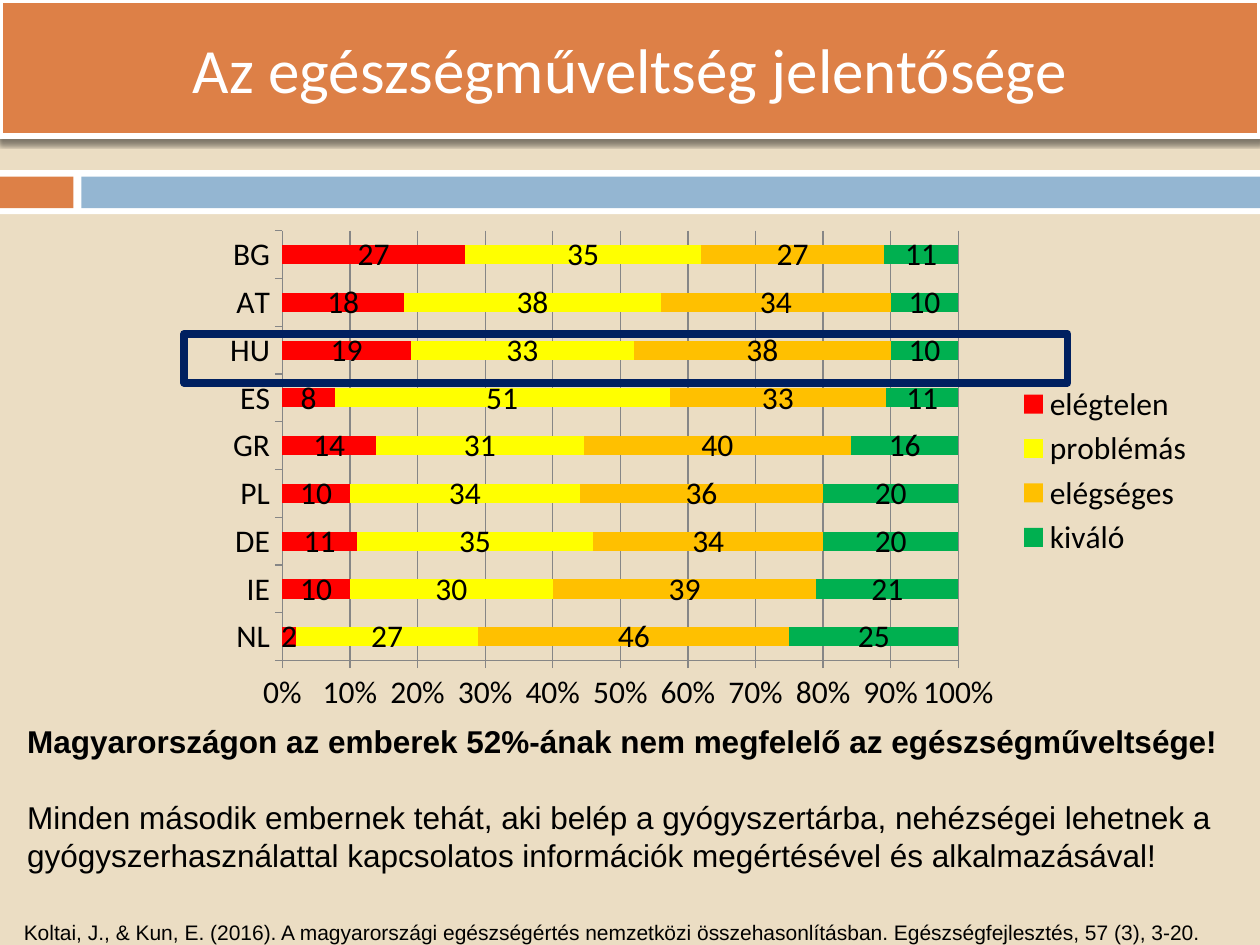
from lxml.etree import SubElement
from pptx import Presentation
from pptx.chart.data import CategoryChartData
from pptx.dml.color import RGBColor
from pptx.enum.chart import XL_CHART_TYPE, XL_LABEL_POSITION, XL_LEGEND_POSITION, XL_TICK_MARK
from pptx.enum.shapes import MSO_SHAPE
from pptx.enum.text import MSO_ANCHOR, PP_ALIGN
from pptx.oxml import parse_xml
from pptx.oxml.ns import nsdecls, qn
from pptx.util import Cm, Pt

SAND = RGBColor(0xEB, 0xDD, 0xC3)
WHITE = RGBColor(0xFF, 0xFF, 0xFF)
BLACK = RGBColor(0, 0, 0)
ORANGE = RGBColor(0xDD, 0x80, 0x47)
BLUE = RGBColor(0x94, 0xB6, 0xD2)
NAVY = RGBColor(0x00, 0x20, 0x60)
GREY = RGBColor(0x86, 0x86, 0x86)
RED = RGBColor(0xFF, 0, 0)
YELLOW = RGBColor(0xFF, 0xFF, 0)
AMBER = RGBColor(0xFF, 0xC0, 0)
GREEN = RGBColor(0, 0xB0, 0x50)

LANDS = ["NL", "IE", "DE", "PL", "GR", "ES", "HU", "AT", "BG"]
LEVELS = [
    ("elégtelen", RED, [2, 10, 11, 10, 14, 8, 19, 18, 27]),
    ("problémás", YELLOW, [27, 30, 35, 34, 31, 51, 33, 38, 35]),
    ("elégséges", AMBER, [46, 39, 34, 36, 40, 33, 38, 34, 27]),
    ("kiváló", GREEN, [25, 21, 20, 20, 16, 11, 10, 10, 11]),
]
SHADOW = (
    f'<a:effectLst {nsdecls("a")}><a:outerShdw blurRad="38100" dist="30480" dir="5400000" '
    'rotWithShape="0"><a:srgbClr val="000000"><a:alpha val="45000"/></a:srgbClr>'
    "</a:outerShdw></a:effectLst>"
)


class Deck:
    head = "Calibri"
    body = "Arial"

    def __init__(self):
        self.prs = Presentation()
        self.prs.slide_width, self.prs.slide_height = Cm(25.4), Cm(19.05)
        self.slide = self.prs.slides.add_slide(self.prs.slide_layouts[5])
        fill = self.slide.background.fill
        fill.solid()
        fill.fore_color.rgb = SAND

    def paint(self, shape, fill=None, line=None, width=0):
        if fill is None:
            shape.fill.background()
        else:
            shape.fill.solid()
            shape.fill.fore_color.rgb = fill
        if line is None:
            shape.line.fill.background()
        else:
            shape.line.color.rgb = line
            shape.line.width = Pt(width)

    def style(self, font, size, color=BLACK, name=None, bold=False):
        font.name = name or self.body
        font.size = Pt(size)
        font.bold = bold
        font.color.rgb = color

    def title(self, text, box):
        shape = self.slide.shapes.title
        shape.left, shape.top, shape.width, shape.height = map(Cm, box)
        self.paint(shape, ORANGE, WHITE, 3.75)
        shape.element.spPr.append(parse_xml(SHADOW))
        frame = shape.text_frame
        frame.vertical_anchor = MSO_ANCHOR.MIDDLE
        para = frame.paragraphs[0]
        para.alignment = PP_ALIGN.CENTER
        run = para.add_run()
        run.text = text
        self.style(run.font, 36, WHITE, self.head)

    def rect(self, box, fill=None, line=None, width=0):
        shape = self.slide.shapes.add_shape(MSO_SHAPE.RECTANGLE, *map(Cm, box))
        shape.shadow.inherit = False
        self.paint(shape, fill, line, width)

    def text(self, box, parts, size, lead=None, gap=0):
        """Write (text, bold) paragraphs, with gap points between them."""
        frame = self.slide.shapes.add_textbox(*map(Cm, box)).text_frame
        frame.word_wrap = True
        for i, (words, bold) in enumerate(parts):
            para = frame.add_paragraph() if i else frame.paragraphs[0]
            para.space_before = Pt(gap if i else 0)
            if lead:
                para.line_spacing = Pt(lead)
            run = para.add_run()
            run.text = words
            self.style(run.font, size, bold=bold)

    def chart(self, box, cats, series, plot):
        """Add a 100% stacked bar chart; plot is the inner area in fractions."""
        data = CategoryChartData()
        data.categories = cats
        for name, _, vals in series:
            data.add_series(name, vals)
        chart = self.slide.shapes.add_chart(
            XL_CHART_TYPE.BAR_STACKED_100, *map(Cm, box), data).chart
        self.style(chart.font, 18, name=self.head)
        chart.has_title = False
        chart.has_legend = True
        chart.legend.position = XL_LEGEND_POSITION.RIGHT
        chart.legend.include_in_layout = False
        for axis in (chart.category_axis, chart.value_axis):
            axis.major_tick_mark = XL_TICK_MARK.OUTSIDE
            axis.minor_tick_mark = XL_TICK_MARK.NONE
            axis.format.line.color.rgb = GREY
        axis = chart.value_axis
        axis.minimum_scale, axis.maximum_scale, axis.major_unit = 0, 1, 0.1
        axis.tick_labels.number_format = "0%"
        axis.tick_labels.number_format_is_linked = False
        axis.has_major_gridlines = True
        axis.major_gridlines.format.line.color.rgb = GREY
        bars = chart.plots[0]
        bars.vary_by_categories = False
        bars.gap_width, bars.overlap = 150, 100
        for item, (_, color, _) in zip(bars.series, series):
            item.format.fill.solid()
            item.format.fill.fore_color.rgb = color
            item.data_labels.show_value = True
            item.data_labels.position = XL_LABEL_POSITION.CENTER
        self.place(chart, plot)

    def place(self, chart, plot):
        area = chart.element.find(".//" + qn("c:plotArea"))
        layout = area.find(qn("c:layout"))
        if layout is None:
            layout = area.makeelement(qn("c:layout"))
            area.insert(0, layout)
        manual = SubElement(layout, qn("c:manualLayout"))
        pairs = [("layoutTarget", "inner"), ("xMode", "edge"), ("yMode", "edge")]
        pairs += zip("xywh", map(str, plot))
        for tag, val in pairs:
            SubElement(manual, qn("c:" + tag)).set("val", val)

    def save(self):
        self.prs.save("out.pptx")


def main():
    deck = Deck()
    deck.rect((0, 3.43, 25.4, 0.89), WHITE)
    deck.rect((0, 3.56, 1.48, 0.64), ORANGE)
    deck.rect((1.64, 3.56, 23.76, 0.64), BLUE)
    deck.title("Az egészségműveltség jelentősége", (0, 0, 25.4, 2.74))
    deck.text((0.23, 18.42, 25.4, 1.27), [
        ("Koltai, J., & Kun, E. (2016). A magyarországi egészségértés nemzetközi "
         "összehasonlításban. Egészségfejlesztés, 57 (3), 3-20.", False),
    ], 12)
    deck.text((0.3, 14.43, 25.1, 3.33), [
        ("Magyarországon az emberek 52%-ának nem megfelelő az egészségműveltsége!", True),
        ("Minden második embernek tehát, aki belép a gyógyszertárba, nehézségei lehetnek a "
         "gyógyszerhasználattal kapcsolatos információk megértésével és alkalmazásával!", False),
    ], 18, lead=21.7, gap=21.7)
    deck.chart((4.29, 4.45, 20.04, 10.08), LANDS, LEVELS, (0.07, 0.02, 0.68, 0.86))
    deck.rect((3.71, 6.73, 17.81, 0.99), line=NAVY, width=4.25)
    deck.save()


if __name__ == "__main__":
    main()
